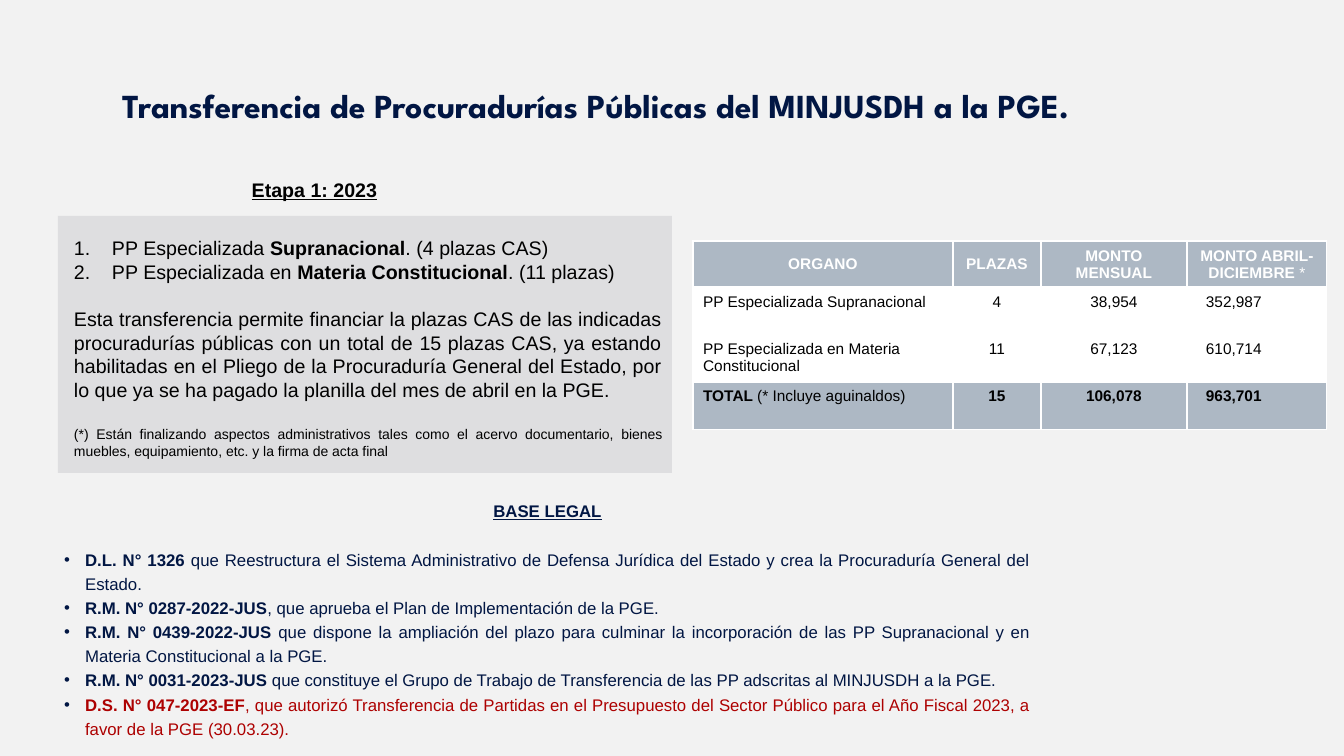
"""Build the slide on the transfer of public prosecutor offices to the PGE."""
from lxml.etree import SubElement
from pptx import Presentation
from pptx.dml.color import RGBColor
from pptx.enum.shapes import MSO_SHAPE
from pptx.enum.text import MSO_ANCHOR as Anchor, MSO_AUTO_SIZE as AutoSize, PP_ALIGN as Align
from pptx.oxml.ns import qn
from pptx.util import Emu, Pt

NAVY, BLACK, WHITE, RED = "011643", "000000", "FFFFFF", "AD0101"
PAGE, PANEL, STEEL = "F2F2F2", "DEDEE0", "ADB8C4"
color = RGBColor.from_string


def px(length):
    return Emu(round(length * 914400 / 100.8))


def write(paragraph, text, size=12, ink=BLACK, font="Arial", underline=False, align=Align.LEFT,
          spacing=1.0, before=0, indent=0, hanging=0, bullet=None, bullet_ink=NAVY):
    paragraph.alignment = align
    paragraph.line_spacing = spacing
    paragraph.space_before = px(before)
    paragraph.space_after = Pt(0)
    properties = paragraph._p.get_or_add_pPr()
    properties.set("marL", str(px(indent)))
    properties.set("indent", str(-px(hanging)))
    if bullet:
        tint = SubElement(properties, qn("a:buClr"))
        SubElement(tint, qn("a:srgbClr"), val=bullet_ink)
        SubElement(properties, qn("a:buFont"), typeface="Arial")
        if bullet == "1.":
            SubElement(properties, qn("a:buAutoNum"), type="arabicPeriod")
        else:
            SubElement(properties, qn("a:buChar"), char=bullet)
    else:
        SubElement(properties, qn("a:buNone"))
    for position, piece in enumerate(text.split("**")):
        if piece:
            run = paragraph.add_run()
            run.text = piece
            run.font.name = font
            run.font.size = Pt(size)
            run.font.bold = position % 2 == 1
            run.font.underline = underline
            run.font.color.rgb = color(ink)


presentation = Presentation()
presentation.slide_width, presentation.slide_height = px(1344), px(756)
slide = presentation.slides.add_slide(presentation.slide_layouts[1])
slide.background.fill.solid()
slide.background.fill.fore_color.rgb = color(PAGE)

title = slide.shapes.title
title.left, title.top, title.width, title.height = px(112), px(74), px(1159), px(68)
title.text_frame.vertical_anchor = Anchor.MIDDLE
title.text_frame.auto_size = AutoSize.NONE
write(title.text_frame.paragraphs[0],
      "**Transferencia de Procuradurías Públicas del MINJUSDH a la PGE.**",
      size=24, ink=NAVY, font="League Spartan", spacing=0.9)

legal = slide.placeholders[1]
legal.left, legal.top, legal.width, legal.height = px(46), px(492), px(995), px(257)
legal.text_frame.auto_size = AutoSize.NONE
write(legal.text_frame.paragraphs[0], "**BASE LEGAL**", ink=NAVY, underline=True,
      align=Align.CENTER, spacing=1.2, indent=8)
laws = [
    ("**D.L. N° 1326 **que Reestructura el Sistema Administrativo de Defensa Jurídica del Estado "
     "y crea la Procuraduría General del Estado.", NAVY),
    ("**R.M. N° 0287-2022-JUS**, que aprueba el Plan de Implementación de la PGE.", NAVY),
    ("**R.M. N° 0439-2022-JUS **que dispone la ampliación del plazo para culminar la incorporación "
     "de las PP Supranacional y en Materia Constitucional a la PGE.", NAVY),
    ("**R.M. N° 0031-2023-JUS **que constituye el Grupo de Trabajo de Transferencia de las PP "
     "adscritas al MINJUSDH a la PGE.", NAVY),
    ("**D.S. N° 047-2023-EF**, que autorizó Transferencia de Partidas en el Presupuesto del Sector "
     "Público para el Año Fiscal 2023, a favor de la PGE (30.03.23).", RED),
]
for number, (law, ink) in enumerate(laws):
    write(legal.text_frame.add_paragraph(), law, ink=ink, align=Align.JUSTIFY, spacing=1.2,
          before=0 if number else 24, indent=29, hanging=21, bullet="•")

panel = slide.shapes.add_shape(MSO_SHAPE.RECTANGLE, px(58), px(216), px(614), px(257))
panel.shadow.inherit = False
panel.fill.solid()
panel.fill.fore_color.rgb = color(PANEL)
panel.line.fill.background()
frame = panel.text_frame
frame.word_wrap = True
frame.vertical_anchor = Anchor.TOP
frame.margin_left, frame.margin_top = px(16), px(20)
numbered = dict(size=14, indent=38, hanging=38, bullet="1.", bullet_ink=BLACK)
stage_notes = [
    ("PP Especializada **Supranacional**. (4 plazas CAS)", numbered),
    ("PP Especializada en **Materia Constitucional**. (11 plazas)", numbered),
    ("Esta transferencia permite financiar la plazas CAS de las indicadas procuradurías públicas "
     "con un total de 15 plazas CAS, ya estando habilitadas en el Pliego de la Procuraduría General "
     "del Estado, por lo que ya se ha pagado la planilla del mes de abril en la PGE.",
     dict(size=14, before=24)),
    ("(*) Están finalizando aspectos administrativos tales como el acervo documentario, bienes "
     "muebles, equipamiento, etc. y la firma de acta final", dict(size=10, before=24)),
]
for number, (note, style) in enumerate(stage_notes):
    paragraph = frame.add_paragraph() if number else frame.paragraphs[0]
    write(paragraph, note, align=Align.JUSTIFY, **style)

stage = slide.shapes.add_textbox(px(88), px(173), px(453), px(34))
stage.text_frame.word_wrap = True
write(stage.text_frame.paragraphs[0], "**Etapa 1: 2023**", size=14, underline=True, align=Align.CENTER)

rows = [
    ("**ORGANO**", "**PLAZAS**", "**MONTO MENSUAL**", "**MONTO ABRIL- DICIEMBRE ***"),
    ("PP Especializada Supranacional", "4", "38,954", "352,987"),
    ("PP Especializada en Materia Constitucional", "11", "67,123", "610,714"),
    ("**TOTAL **(* Incluye aguinaldos)", "**15**", "**106,078**", "**963,701**"),
]
widths = [260, 88, 146, 140]
table = slide.shapes.add_table(len(rows), len(widths), px(693), px(241), px(sum(widths)), px(188)).table
table.first_row = table.horz_banding = False
for column, width in zip(table.columns, widths):
    column.width = px(width)
for row_number, row in enumerate(rows):
    table.rows[row_number].height = px(47)
    header = row_number == 0
    for column_number, text in enumerate(row):
        cell = table.cell(row_number, column_number)
        amount = column_number == 3 and not header
        cell.vertical_anchor = Anchor.MIDDLE if header else Anchor.TOP
        if amount:
            cell.margin_left = px(19)
        for side in ("L", "R", "T", "B"):
            thickness = 3 if header and side == "B" else 1
            border = SubElement(cell._tc.get_or_add_tcPr(), qn(f"a:ln{side}"), w=str(Pt(thickness)))
            SubElement(SubElement(border, qn("a:solidFill")), qn("a:srgbClr"), val=WHITE)
        cell.fill.solid()
        cell.fill.fore_color.rgb = color(STEEL if row_number in (0, 3) else WHITE)
        left = amount or (column_number == 0 and not header)
        write(cell.text_frame.paragraphs[0], text, size=11, ink=WHITE if header else BLACK,
              align=Align.LEFT if left else Align.CENTER)

presentation.save("out.pptx")
